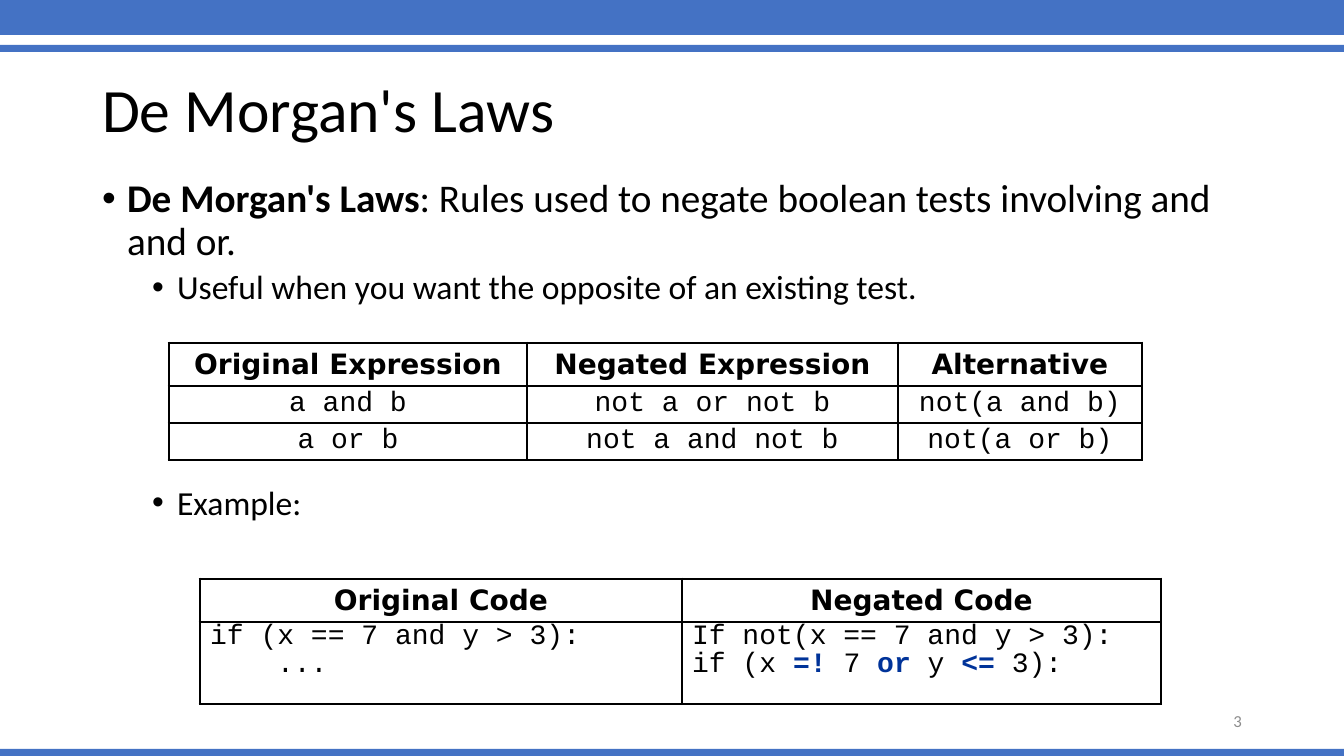
from dataclasses import dataclass

from pptx import Presentation
from pptx.dml.color import RGBColor
from pptx.enum.shapes import MSO_SHAPE
from pptx.enum.text import MSO_ANCHOR, MSO_AUTO_SIZE, PP_ALIGN
from pptx.oxml import parse_xml
from pptx.oxml.ns import nsdecls
from pptx.util import Pt

WIDTH, HEIGHT = 1344, 756
PX = 12192000 / WIDTH


@dataclass(frozen=True)
class Theme:
    black: str = "000000"
    bar: str = "4472C4"
    change: str = "003399"
    muted: str = "8C8C8C"
    body_font: str = "Calibri"
    head_font: str = "DejaVu Sans"
    code_font: str = "Courier New"
    title: int = 44
    level1: int = 28
    level2: int = 24
    cell: int = 20
    number: int = 12
    outer: float = 2.25
    inner: float = 1


T = Theme()


def px(n):
    return round(n * PX)


def emu_box(box):
    return [px(n) for n in box]


def write(p, text, *, size, font=T.body_font, color=T.black, bold=False,
          align=PP_ALIGN.LEFT, line=None, before=0):
    """Fill a paragraph; text is a string or a list of (string, run format) pairs."""
    p.alignment, p.line_spacing, p.space_before = align, line, Pt(before)
    for part, own in [(text, {})] if isinstance(text, str) else text:
        r = p.add_run()
        r.text = part
        r.font.name, r.font.size = font, Pt(size)
        r.font.bold = own.get("bold", bold)
        r.font.color.rgb = RGBColor.from_string(own.get("color", color))


def indent(p, left, hanging=0, bullet=None):
    pPr = p._p.get_or_add_pPr()
    pPr.set("marL", str(px(left)))
    pPr.set("indent", str(-px(hanging)))
    if bullet:
        pPr.append(parse_xml(f'<a:buChar {nsdecls("a")} char="{bullet}"/>'))


def place(sp, box, anchor):
    sp.left, sp.top, sp.width, sp.height = emu_box(box)
    tf = sp.text_frame
    tf.word_wrap, tf.auto_size, tf.vertical_anchor = True, MSO_AUTO_SIZE.NONE, anchor
    return tf


def add_bar(s, box):
    sp = s.shapes.add_shape(MSO_SHAPE.RECTANGLE, *emu_box(box))
    sp.shadow.inherit = False
    sp.fill.solid()
    sp.fill.fore_color.rgb = RGBColor.from_string(T.bar)
    sp.line.fill.background()


def add_bars(s):
    for top, height in ((-3, 38), (45, 7), (749, 7)):
        add_bar(s, (0, top, WIDTH, height))


def add_title(s, box, text):
    tf = place(s.shapes.title, box, MSO_ANCHOR.MIDDLE)
    write(tf.paragraphs[0], text, size=T.title, line=0.9)


def add_bullets(s, box, items):
    """Items are (level, text, points of space before)."""
    tf = place(s.placeholders[1], box, MSO_ANCHOR.TOP)
    for i, (level, text, before) in enumerate(items):
        p = tf.add_paragraph() if i else tf.paragraphs[0]
        p.level = level
        write(p, text, size=T.level2 if level else T.level1, line=0.9, before=before)
        indent(p, 25 + 50 * level, 25, "•")


def add_number(s, box, text):
    tf = place(s.shapes.add_textbox(*emu_box(box)), box, MSO_ANCHOR.MIDDLE)
    write(tf.paragraphs[0], text, size=T.number, color=T.muted, align=PP_ALIGN.RIGHT)


def set_borders(cell, outer_sides):
    tcPr = cell._tc.get_or_add_tcPr()
    for side in "LRTB":
        width = Pt(T.outer if side in outer_sides else T.inner)
        tcPr.append(parse_xml(
            f'<a:ln{side} {nsdecls("a")} w="{width}"><a:solidFill>'
            f'<a:srgbClr val="{T.black}"/></a:solidFill></a:ln{side}>'))


def add_grid(s, left, top, cols, heights, rows, align, line):
    """Each cell is a list of lines, each line a pair of text and left indent."""
    box = (left, top, sum(cols), sum(heights))
    table = s.shapes.add_table(len(rows), len(cols), *emu_box(box)).table
    table.first_row = table.horz_banding = False
    for col, width in zip(table.columns, cols):
        col.width = px(width)
    for y, row in enumerate(rows):
        table.rows[y].height = px(heights[y])
        look = (dict(font=T.code_font, align=align, line=line) if y else
                dict(font=T.head_font, align=PP_ALIGN.CENTER, bold=True))
        for x, lines in enumerate(row):
            cell = table.cell(y, x)
            edges = {"L": x == 0, "R": x == len(cols) - 1,
                     "T": y == 0, "B": y == len(rows) - 1}
            set_borders(cell, [side for side, outer in edges.items() if outer])
            cell.fill.background()
            tf = cell.text_frame
            for i, (text, left_indent) in enumerate(lines):
                p = tf.add_paragraph() if i else tf.paragraphs[0]
                write(p, text, size=T.cell, before=4 if i else 0, **look)
                indent(p, left_indent)


def add_laws_table(s, left, top):
    rows = [("Original Expression", "Negated Expression", "Alternative"),
            ("a and b", "not a or not b", "not(a and b)"),
            ("a or b", "not a and not b", "not(a or b)")]
    add_grid(s, left, top, (358, 371, 244), (43, 37, 37),
             [[[(text, 0)] for text in row] for row in rows], PP_ALIGN.CENTER, 0.8)


def add_code_table(s, left, top):
    change = dict(color=T.change, bold=True)
    negated = [("if (x ", {}), ("=! ", change), ("7 ", {}), ("or ", change),
               ("y ", {}), ("<=", change), (" 3):", {})]
    rows = [[[("Original Code", 0)], [("Negated Code", 0)]],
            [[("if (x == 7 and y > 3):", 0), ("...", 67)],
             [("If not(x == 7 and y > 3):", 0), (negated, 0)]]]
    add_grid(s, left, top, (482, 479), (43, 82), rows, PP_ALIGN.LEFT, 0.7)


def main():
    prs = Presentation()
    prs.slide_width, prs.slide_height = px(WIDTH), px(HEIGHT)
    s = prs.slides.add_slide(prs.slide_layouts[1])
    add_bars(s)
    add_title(s, (92, 40, 1159, 146), "De Morgan's Laws")
    add_bullets(s, (92, 174, 1159, 582), [
        (0, [("De Morgan's Laws", dict(bold=True)),
             (": Rules used to negate boolean tests involving and and or.", {})], 10),
        (1, "Useful when you want the opposite of an existing test.", 5),
        (1, "Example:", 128)])
    add_laws_table(s, 169, 343)
    add_code_table(s, 200, 579)
    add_number(s, (950, 701, 302, 40), "3")
    prs.save("out.pptx")


if __name__ == "__main__":
    main()
